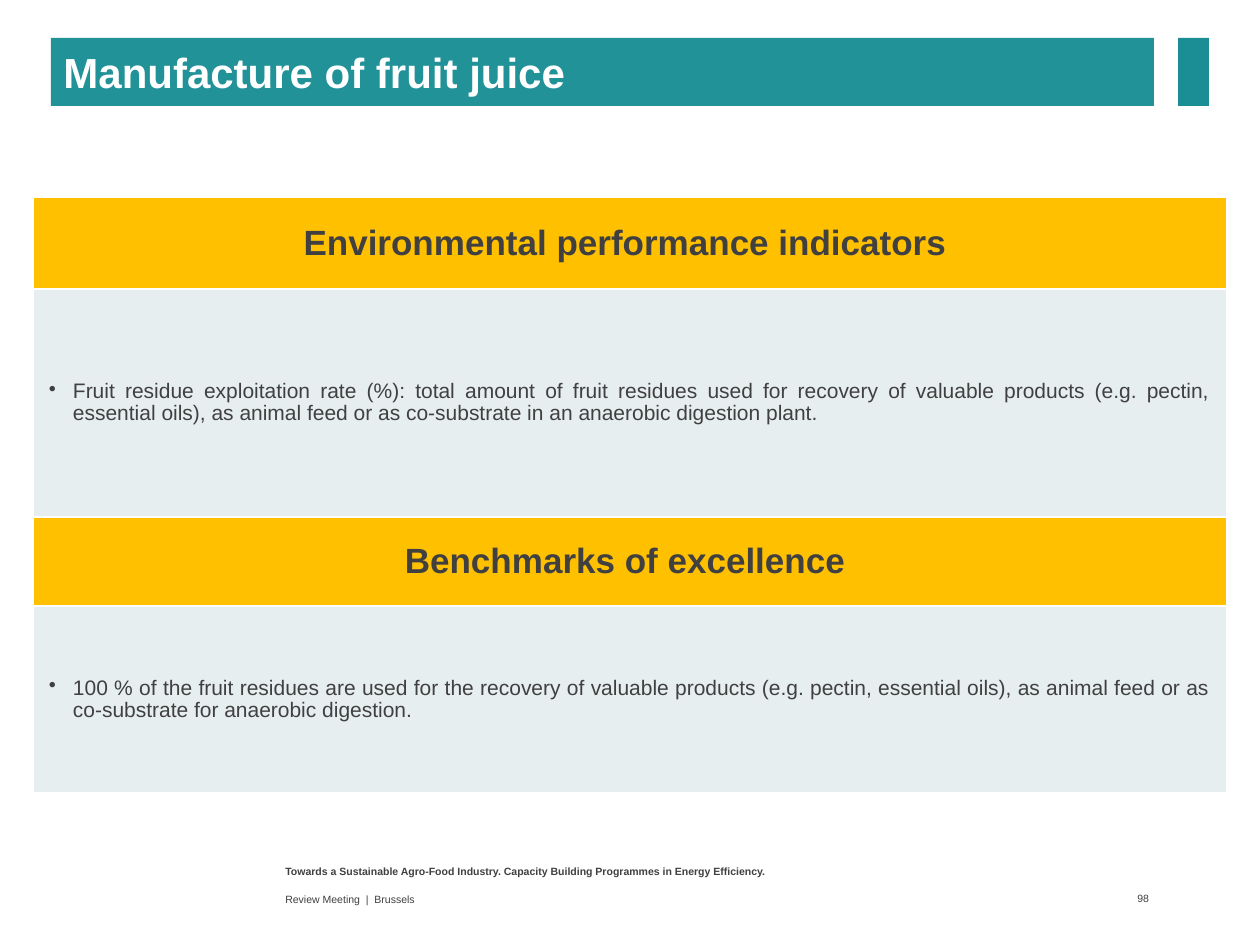
from dataclasses import dataclass

from lxml.etree import SubElement
from pptx import Presentation
from pptx.dml.color import RGBColor
from pptx.enum.shapes import MSO_SHAPE
from pptx.enum.text import MSO_ANCHOR, PP_ALIGN
from pptx.oxml.ns import qn
from pptx.util import Pt

PX = 914400 / 126


def emu(px):
    return round(px * PX)


@dataclass(frozen=True)
class Theme:
    font: str = "Arial"
    text: str = "404040"
    white: str = "FFFFFF"
    banner: str = "209298"
    accent: str = "1B8E95"
    header: str = "FFC000"
    body: str = "E7EEEF"
    title_size: int = 24
    header_size: int = 20
    body_size: int = 12
    footer_size: int = 6


class Deck:
    def __init__(self, theme):
        self.theme = theme
        self.prs = Presentation()
        self.prs.slide_width, self.prs.slide_height = emu(1260), emu(945)
        self.slide = self.prs.slides.add_slide(self.prs.slide_layouts[6])

    def style(self, p, size, color, bold=False, align=PP_ALIGN.LEFT):
        p.alignment = align
        p.font.name = self.theme.font
        p.font.size = Pt(size)
        p.font.bold = bold
        p.font.color.rgb = RGBColor.from_string(color)

    def bar(self, x, y, w, h, color, text=""):
        sp = self.slide.shapes.add_shape(MSO_SHAPE.RECTANGLE, *map(emu, (x, y, w, h)))
        sp.shadow.inherit = False
        sp.fill.solid()
        sp.fill.fore_color.rgb = RGBColor.from_string(color)
        sp.line.fill.background()
        if text:
            tf = sp.text_frame
            tf.text = text
            tf.vertical_anchor = MSO_ANCHOR.MIDDLE
            self.style(tf.paragraphs[0], self.theme.title_size, self.theme.white, True)

    def footer(self, x, y, w, h, text, bold=False, align=PP_ALIGN.LEFT,
               anchor=MSO_ANCHOR.MIDDLE, right=13):
        tf = self.slide.shapes.add_textbox(*map(emu, (x, y, w, h))).text_frame
        tf.word_wrap = True
        tf.vertical_anchor = anchor
        tf.margin_right = emu(right)
        tf.text = text
        self.style(tf.paragraphs[0], self.theme.footer_size, self.theme.text, bold, align)

    def borders(self, cell):
        tc_pr = cell._tc.get_or_add_tcPr()
        for i, side in enumerate(("lnL", "lnR", "lnT", "lnB")):
            ln = SubElement(tc_pr, qn(f"a:{side}"), w=str(Pt(1)))
            fill = SubElement(ln, qn("a:solidFill"))
            SubElement(fill, qn("a:srgbClr"), val=self.theme.white)
            tc_pr.remove(ln)
            tc_pr.insert(i, ln)

    def bullet(self, p):
        p_pr = p._p.get_or_add_pPr()
        p_pr.set("marL", str(emu(24)))
        p_pr.set("indent", str(-emu(24)))
        SubElement(p_pr, qn("a:buChar"), char="•")

    def cell(self, cell, text, color, dx, dy):
        cell.fill.solid()
        cell.fill.fore_color.rgb = RGBColor.from_string(color)
        self.borders(cell)
        cell.vertical_anchor = MSO_ANCHOR.MIDDLE
        cell.margin_left = cell.margin_right = emu(dx)
        cell.margin_top = cell.margin_bottom = emu(dy)
        cell.text = text
        return cell.text_frame.paragraphs[0]

    def panel(self, y, heights, heading, body, space_after=0):
        t = self.theme
        frame = self.slide.shapes.add_table(
            2, 1, *map(emu, (33, y, 1194, sum(heights))))
        table = frame.table
        for row, height in zip(table.rows, heights):
            row.height = emu(height)
        p = self.cell(table.cell(0, 0), heading, t.header, 13, 6)
        self.style(p, t.header_size, t.text, True, PP_ALIGN.CENTER)
        p = self.cell(table.cell(1, 0), body, t.body, 16, 8)
        self.bullet(p)
        p.line_spacing = 0.95
        p.space_after = Pt(space_after)
        self.style(p, t.body_size, t.text, align=PP_ALIGN.JUSTIFY)


def main():
    theme = Theme()
    s = Deck(theme)
    s.footer(273, 859, 693, 26,
             "Towards a Sustainable Agro-Food Industry. "
             "Capacity Building Programmes in Energy Efficiency.",
             bold=True, anchor=MSO_ANCHOR.TOP)
    s.footer(273, 887, 693, 24, "Review Meeting  |  Brussels")
    s.footer(1084, 886, 70, 25, "98", align=PP_ALIGN.RIGHT, right=5)
    s.panel(197, (92, 228), "Environmental performance indicators ",
            "Fruit residue exploitation rate (%): total amount of fruit residues used "
            "for recovery of valuable products (e.g. pectin, essential oils), as animal "
            "feed or as co-substrate in an anaerobic digestion plant. ")
    s.panel(517, (89, 187), "Benchmarks of excellence ",
            "100 % of the fruit residues are used for the recovery of valuable products "
            "(e.g. pectin, essential oils), as animal feed or as co-substrate for "
            "anaerobic digestion. ", space_after=6)
    s.bar(51, 38, 1103, 68, theme.banner, "Manufacture of fruit juice")
    s.bar(1178, 38, 31, 68, theme.accent)
    s.prs.save("out.pptx")


if __name__ == "__main__":
    main()
